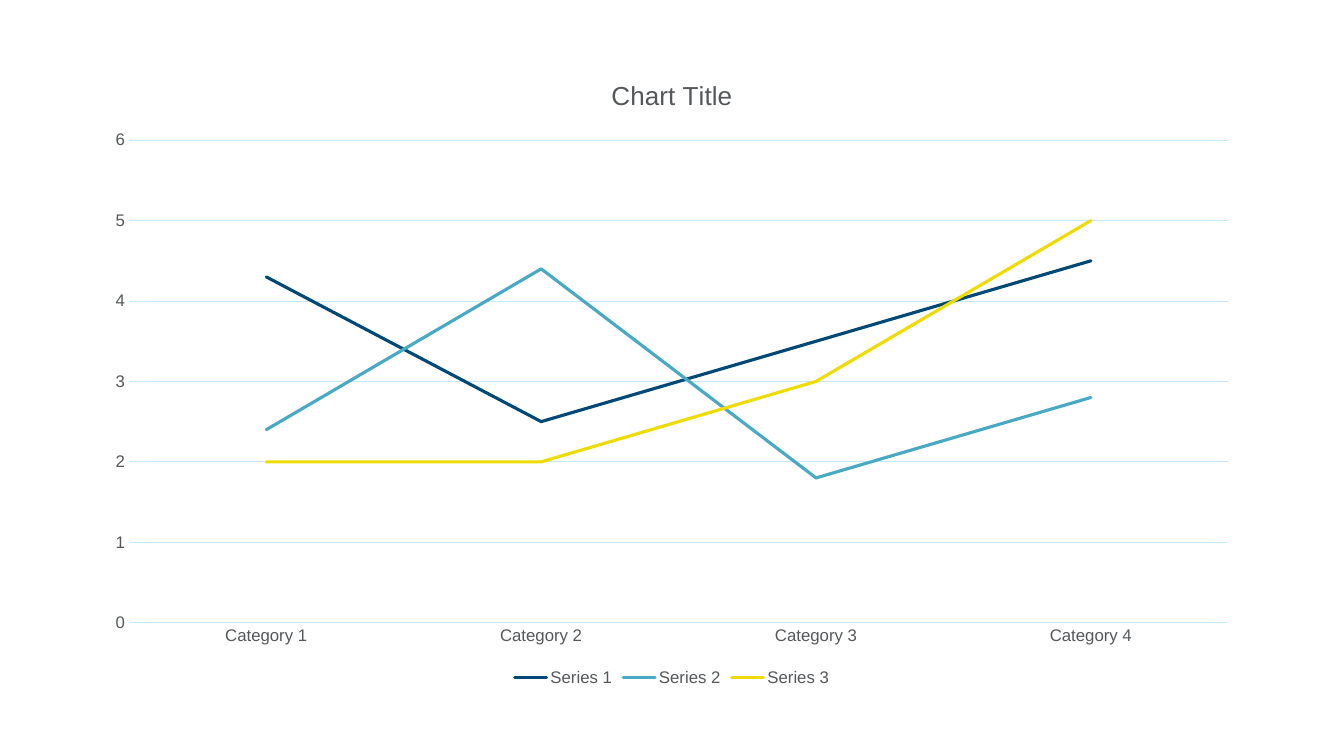
from dataclasses import dataclass

import pptx
import pptx.chart.data
import pptx.dml.color
import pptx.enum.chart
import pptx.util

COLORS: dict[str, str] = {
    "navy": "004976",
    "teal": "48A9C5",
    "yellow": "EEDC00",
    "text": "54585A",
    "grid": "C4E9FF",
    "background": "FFFFFF",
}
FONT = "Arial"
CATEGORIES = [f"Category {n}" for n in range(1, 5)]


@dataclass(frozen=True)
class LineSeries:
    name: str
    values: tuple[float, ...]
    color: str


SERIES = [
    LineSeries("Series 1", (4.3, 2.5, 3.5, 4.5), "navy"),
    LineSeries("Series 2", (2.4, 4.4, 1.8, 2.8), "teal"),
    LineSeries("Series 3", (2, 2, 3, 5), "yellow"),
]


def rgb(name: str) -> pptx.dml.color.RGBColor:
    return pptx.dml.color.RGBColor.from_string(COLORS[name])


def style_font(font: "pptx.text.text.Font", size: float) -> None:
    font.name = FONT
    font.size = pptx.util.Pt(size)
    font.bold = False
    font.color.rgb = rgb("text")


def style_line(line: "pptx.dml.line.LineFormat", color: str, width: float) -> None:
    line.color.rgb = rgb(color)
    line.width = pptx.util.Pt(width)


def style_axes(chart: "pptx.chart.chart.Chart") -> None:
    for axis in (chart.category_axis, chart.value_axis):
        axis.major_tick_mark = pptx.enum.chart.XL_TICK_MARK.NONE
        axis.minor_tick_mark = pptx.enum.chart.XL_TICK_MARK.NONE
        style_font(axis.tick_labels.font, 12)
    chart.category_axis.has_major_gridlines = False
    style_line(chart.category_axis.format.line, "grid", 0.75)
    value_axis = chart.value_axis
    value_axis.minimum_scale = 0
    value_axis.maximum_scale = 6
    value_axis.major_unit = 1
    value_axis.format.line.fill.background()
    value_axis.has_major_gridlines = True
    style_line(value_axis.major_gridlines.format.line, "grid", 0.75)


def style_series(chart: "pptx.chart.chart.Chart") -> None:
    for plotted, series in zip(chart.plots[0].series, SERIES):
        plotted.smooth = False
        plotted.marker.style = pptx.enum.chart.XL_MARKER_STYLE.NONE
        style_line(plotted.format.line, series.color, 2.25)
        plotted.format.line._get_or_add_ln().set("cap", "rnd")


def add_line_chart(s: "pptx.slide.Slide") -> None:
    data = pptx.chart.data.CategoryChartData()
    data.categories = CATEGORIES
    for series in SERIES:
        data.add_series(series.name, series.values)
    box = [pptx.util.Pt(v) for v in (66, 39.6, 828, 453.6)]
    chart = s.shapes.add_chart(
        pptx.enum.chart.XL_CHART_TYPE.LINE, *box, data
    ).chart
    style_font(chart.font, 12)
    chart.plots[0].vary_by_categories = False
    chart.has_title = True
    tf = chart.chart_title.text_frame
    tf.text = "Chart Title"
    style_font(tf.paragraphs[0].runs[0].font, 18.6)
    chart.chart_title.include_in_layout = False
    chart.has_legend = True
    chart.legend.position = pptx.enum.chart.XL_LEGEND_POSITION.BOTTOM
    chart.legend.include_in_layout = False
    style_font(chart.legend.font, 12)
    style_axes(chart)
    style_series(chart)


def main() -> None:
    prs = pptx.Presentation()
    prs.slide_width = pptx.util.Pt(960)
    prs.slide_height = pptx.util.Pt(540)
    s = prs.slides.add_slide(prs.slide_layouts.get_by_name("Blank"))
    s.background.fill.solid()
    s.background.fill.fore_color.rgb = rgb("background")
    add_line_chart(s)
    prs.save("out.pptx")


if __name__ == "__main__":
    main()
